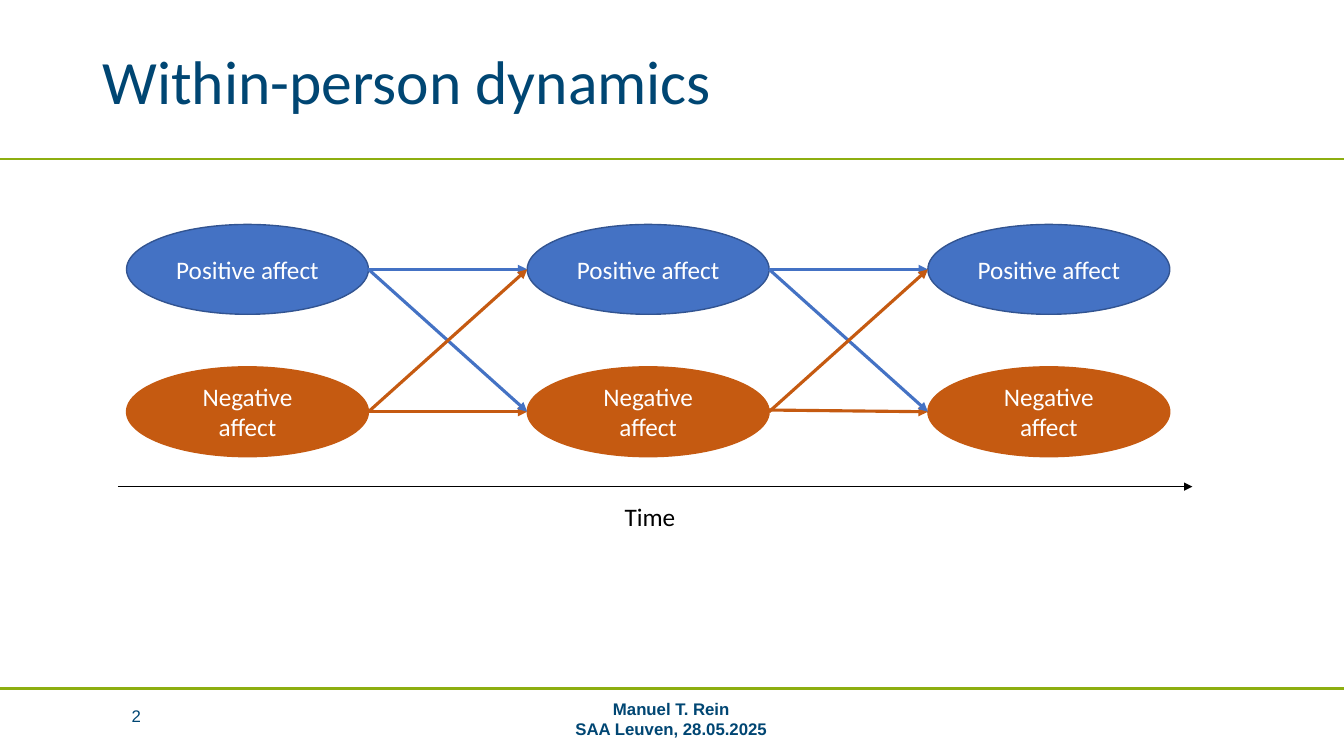
from lxml import etree
from pptx import Presentation
from pptx.dml.color import RGBColor
from pptx.enum.shapes import MSO_CONNECTOR, MSO_SHAPE
from pptx.enum.text import MSO_ANCHOR, PP_ALIGN
from pptx.oxml.ns import qn
from pptx.util import Pt

STRAIGHT = MSO_CONNECTOR.STRAIGHT
ELLIPSE = MSO_SHAPE.OVAL
MIDDLE, TOP = MSO_ANCHOR.MIDDLE, MSO_ANCHOR.TOP
LEFT, CENTER = PP_ALIGN.LEFT, PP_ALIGN.CENTER

WIDTH, HEIGHT = 960, 540
NAVY, GREEN, BLACK, WHITE = "004673", "8DAE10", "000000", "FFFFFF"
BLUE, BLUE_EDGE, ORANGE = "4472C4", "325491", "C55A11"


def color(value):
    return RGBColor.from_string(value)


class SlideBuilder:
    """Draw styled text, ellipses and lines on one slide, in points."""

    def __init__(self, slide, body_font="Calibri", footer_font="Arial"):
        self.slide = slide
        self.body_font = body_font
        self.footer_font = footer_font

    def add_lines(self, frame, lines, size, text_color, font, align, bold=False):
        for index, line in enumerate(lines):
            paragraph = frame.paragraphs[0] if index == 0 else frame.add_paragraph()
            paragraph.alignment = align
            run = paragraph.add_run()
            run.text = line
            run.font.name = font
            run.font.size = Pt(size)
            run.font.bold = bold
            run.font.color.rgb = color(text_color)

    def text(self, box, lines, size, text_color, align=LEFT, anchor=MIDDLE):
        shape = self.slide.shapes.add_textbox(*map(Pt, box))
        frame = shape.text_frame
        frame.word_wrap = True
        frame.vertical_anchor = anchor
        self.add_lines(frame, lines, size, text_color, self.body_font, align)
        return frame

    def footer(self, box, lines, bold=False):
        frame = self.slide.shapes.add_textbox(*map(Pt, box)).text_frame
        frame.word_wrap = True
        frame.vertical_anchor = MIDDLE
        frame.margin_left = frame.margin_right = 0
        frame.margin_top = frame.margin_bottom = 0
        self.add_lines(frame, lines, 12, NAVY, self.footer_font, CENTER, bold)

    def ellipse(self, box, label, fill, edge):
        shape = self.slide.shapes.add_shape(ELLIPSE, *map(Pt, box))
        shape.shadow.inherit = False
        shape.fill.solid()
        shape.fill.fore_color.rgb = color(fill)
        shape.line.color.rgb = color(edge)
        shape.line.width = Pt(1)
        shape.text_frame.word_wrap = True
        shape.text_frame.vertical_anchor = MIDDLE
        self.add_lines(shape.text_frame, [label], 18, WHITE, self.body_font, CENTER)

    def line(self, start, end, line_color, width, arrow=False):
        connector = self.slide.shapes.add_connector(
            STRAIGHT, *map(Pt, (*start, *end)))
        connector.line.color.rgb = color(line_color)
        connector.line.width = Pt(width)
        properties = connector._element.spPr
        if arrow:
            outline = properties.find(qn("a:ln"))
            etree.SubElement(outline, qn("a:tailEnd"), type="triangle")
        etree.SubElement(properties, qn("a:effectLst"))


def main():
    presentation = Presentation()
    presentation.slide_width = Pt(WIDTH)
    presentation.slide_height = Pt(HEIGHT)
    slide = presentation.slides.add_slide(presentation.slide_layouts[6])
    builder = SlideBuilder(slide)

    builder.footer((273.6, 499, 411.8, 28.8),
                   ["Manuel T. Rein", "SAA Leuven, 28.05.2025"], bold=True)
    builder.footer((66, 497, 66, 28.8), ["2 "])
    for rule_y in (491.8, 113.5):
        builder.line((0, rule_y), (WIDTH, rule_y), GREEN, 1.5)
    title = builder.text((66, 18.7, 828, 83.5),
                         ["Within-person dynamics"], 44, NAVY)
    title.paragraphs[0].line_spacing = 0.9

    first_x, step = 90.4, 286.2
    ellipse_width, ellipse_height = 172.8, 64.2
    positive_y, negative_y = 160.3, 262
    lefts = [first_x + step * column for column in range(3)]
    for left in lefts:
        for top, label, fill, edge in (
                (positive_y, "Positive affect", BLUE, BLUE_EDGE),
                (negative_y, "Negative affect", ORANGE, ORANGE)):
            builder.ellipse((left, top, ellipse_width, ellipse_height),
                            label, fill, edge)

    positive = positive_y + ellipse_height / 2
    negative = negative_y + ellipse_height / 2
    for left, next_left, carry_y in zip(lefts, lefts[1:], (negative, negative - 1.2)):
        right = left + ellipse_width
        for start_y, end_y, effect_color in (
                (positive, positive, BLUE),
                (carry_y, negative, ORANGE),
                (positive, negative, BLUE),
                (negative, positive, ORANGE)):
            builder.line((right, start_y), (next_left, end_y),
                         effect_color, 2.25, arrow=True)

    builder.line((84.2, 347.6), (851.8, 347.6), BLACK, 0.5, arrow=True)
    builder.text((439, 354.3, 102.2, 29), ["Time"], 18, BLACK, anchor=TOP)

    presentation.save("out.pptx")


if __name__ == "__main__":
    main()
